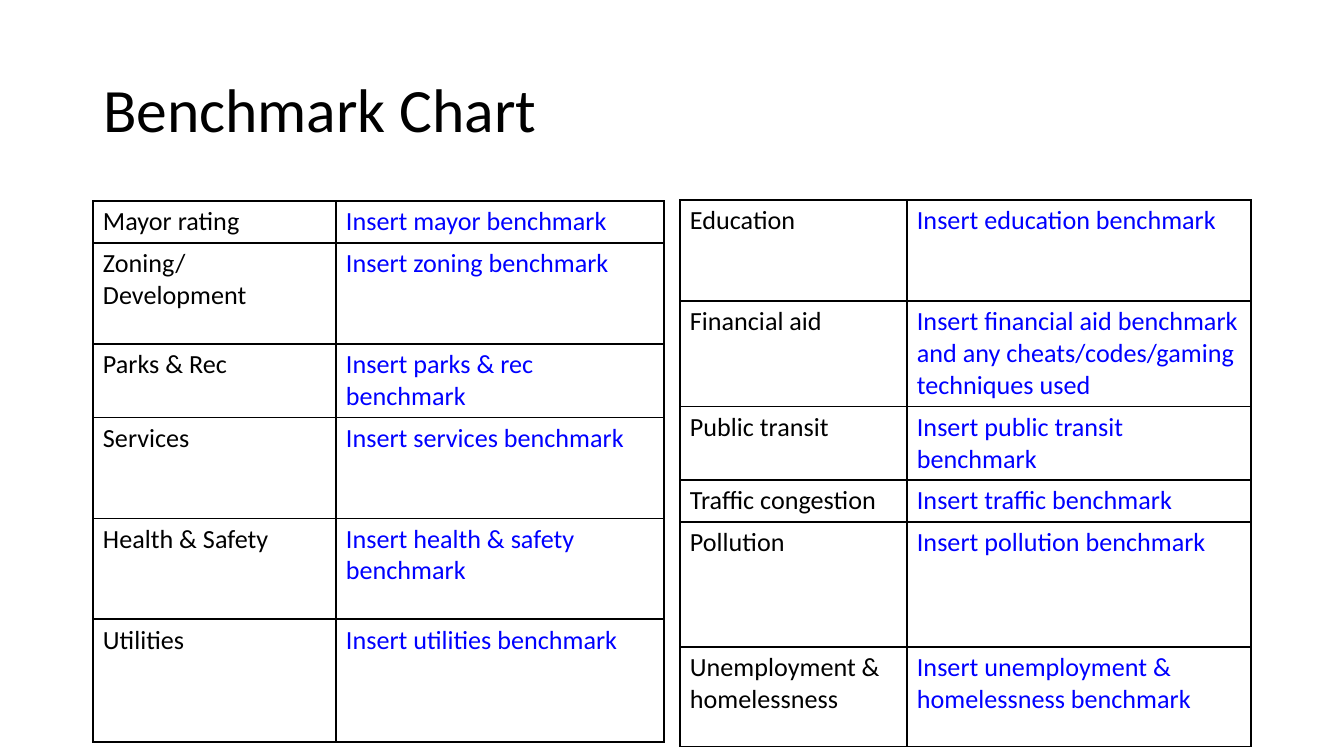
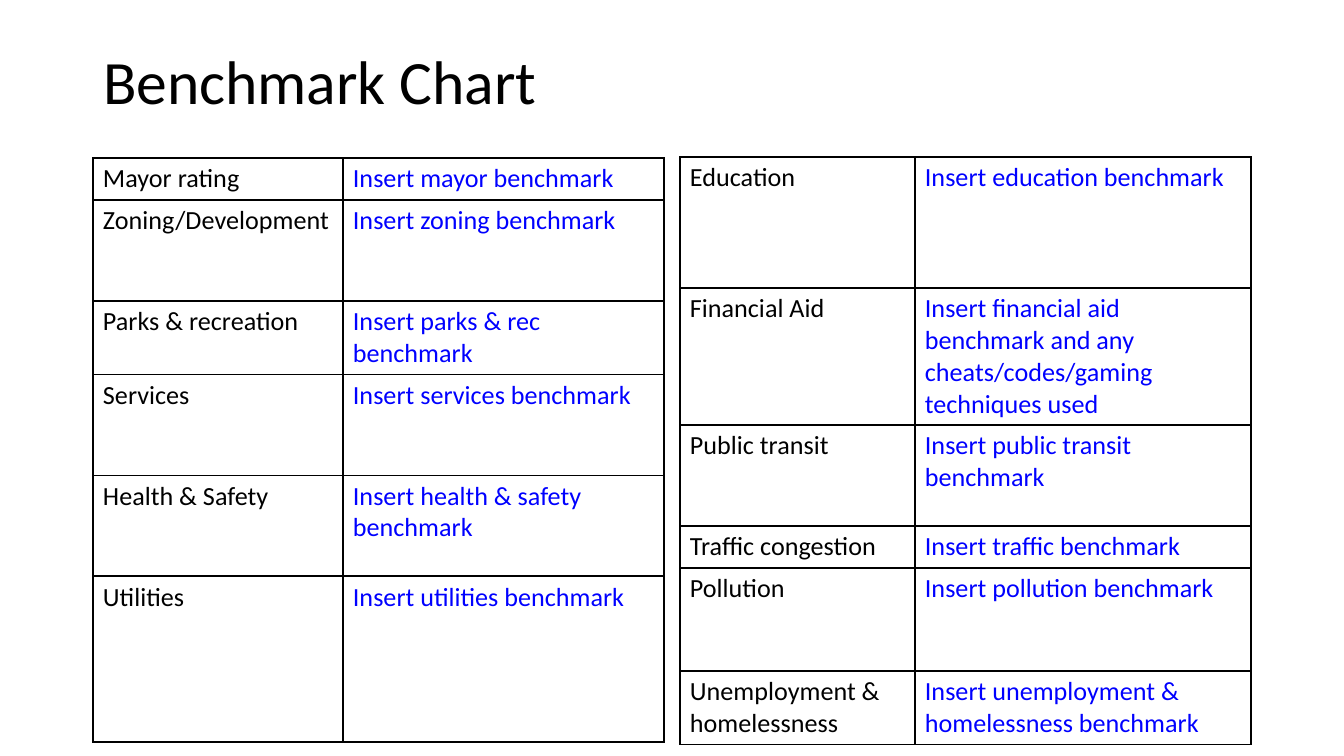
"""Build two benchmark chart slides, each with a title and two tables."""
import lxml.etree
import pptx
import pptx.dml.color
import pptx.enum.text
import pptx.oxml.ns
import pptx.util

PX = 914400 / 134.4
BLACK = pptx.dml.color.RGBColor(0, 0, 0)
BLUE = pptx.dml.color.RGBColor(0, 0, 255)
WHITE = pptx.dml.color.RGBColor(255, 255, 255)
FONT = "Calibri"
TITLE_ONLY = 5

TABLE_WIDTH = 571
LEFT, RIGHT = 93, 680
INSET_X, INSET_Y = 10, 5

CITY_LABELS = ["Mayor rating", "Zoning/ Development", "Parks & Rec",
               "Services", "Health & Safety", "Utilities"]
CITY_BENCHMARKS = ["Insert mayor benchmark", "Insert zoning benchmark",
                   "Insert parks & rec benchmark", "Insert services benchmark",
                   "Insert health & safety benchmark", "Insert utilities benchmark"]
SOCIAL_LABELS = ["Education", "Financial aid", "Public transit",
                 "Traffic congestion", "Pollution", "Unemployment & homelessness"]
SOCIAL_BENCHMARKS = [
    "Insert education benchmark",
    "Insert financial aid benchmark and any cheats/codes/gaming techniques used",
    "Insert public transit benchmark", "Insert traffic benchmark",
    "Insert pollution benchmark", "Insert unemployment & homelessness benchmark"]


def emu(pixels):
    """Turn px into EMU."""
    return pptx.util.Emu(round(pixels * PX))


def write(frame, text, *, size=14, color=BLACK, line_spacing=None):
    """Put one formatted, left-aligned paragraph in a text frame."""
    para = frame.paragraphs[0]
    para.alignment = pptx.enum.text.PP_ALIGN.LEFT
    if line_spacing:
        para.line_spacing = line_spacing
    span = para.add_run()
    span.text = text
    span.font.name = FONT
    span.font.size = pptx.util.Pt(size)
    span.font.color.rgb = color


def set_insets(target):
    """Give a text frame or a cell the shared margins."""
    target.margin_left = target.margin_right = emu(INSET_X)
    target.margin_top = target.margin_bottom = emu(INSET_Y)


def set_borders(cell, color=BLACK, points=1):
    """Draw a solid line on all four sides of a cell."""
    properties = cell._tc.get_or_add_tcPr()
    for side in ("a:lnL", "a:lnR", "a:lnT", "a:lnB"):
        line = lxml.etree.SubElement(properties, pptx.oxml.ns.qn(side),
                                     w=str(pptx.util.Pt(points)))
        fill = lxml.etree.SubElement(line, pptx.oxml.ns.qn("a:solidFill"))
        lxml.etree.SubElement(fill, pptx.oxml.ns.qn("a:srgbClr"), val=str(color))


def add_page(deck, title_height):
    """Add a white page with the shared title."""
    page = deck.slides.add_slide(deck.slide_layouts[TITLE_ONLY])
    page.background.fill.solid()
    page.background.fill.fore_color.rgb = WHITE
    box = page.shapes.title
    box.left, box.top = emu(LEFT), emu(40)
    box.width, box.height = emu(RIGHT + TABLE_WIDTH - LEFT), emu(title_height)
    frame = box.text_frame
    frame.auto_size = pptx.enum.text.MSO_AUTO_SIZE.NONE
    frame.vertical_anchor = pptx.enum.text.MSO_ANCHOR.MIDDLE
    set_insets(frame)
    write(frame, "Benchmark Chart", size=33, line_spacing=0.9)
    return page


def add_benchmarks(page, left, top, label_width, heights, labels, benchmarks):
    """Add a table of labels and the benchmarks to fill in."""
    table = page.shapes.add_table(len(labels), 2, emu(left), emu(top),
                                  emu(TABLE_WIDTH), emu(sum(heights))).table
    table.first_row = table.horz_banding = False
    for column, width in zip(table.columns, (label_width, TABLE_WIDTH - label_width)):
        column.width = emu(width)
    for row, height, texts in zip(table.rows, heights, zip(labels, benchmarks)):
        row.height = emu(height)
        for cell, text, color in zip(row.cells, texts, (BLACK, BLUE)):
            set_insets(cell)
            set_borders(cell)
            cell.fill.background()
            write(cell.text_frame, text, color=color)


def main():
    """Build and save the deck."""
    deck = pptx.Presentation()
    deck.slide_width, deck.slide_height = emu(1344), emu(756)

    page = add_page(deck, 146)
    add_benchmarks(page, LEFT, 201, 243, [40, 101, 40, 101, 101, 123],
                   CITY_LABELS, CITY_BENCHMARKS)
    add_benchmarks(page, RIGHT, 200, 227, [101, 71, 40, 40, 125, 100],
                   SOCIAL_LABELS, SOCIAL_BENCHMARKS)

    page = add_page(deck, 90)
    renamed = {"Zoning/ Development": "Zoning/Development",
               "Parks & Rec": "Parks & recreation",
               "Financial aid": "Financial Aid"}
    add_benchmarks(page, LEFT, 158, 250, [40, 101, 40, 101, 101, 166],
                   [renamed.get(label, label) for label in CITY_LABELS],
                   CITY_BENCHMARKS)
    add_benchmarks(page, RIGHT, 157, 235, [131, 40, 101, 40, 103, 71],
                   [renamed.get(label, label) for label in SOCIAL_LABELS],
                   SOCIAL_BENCHMARKS)
    deck.save("out.pptx")


if __name__ == "__main__":
    main()
